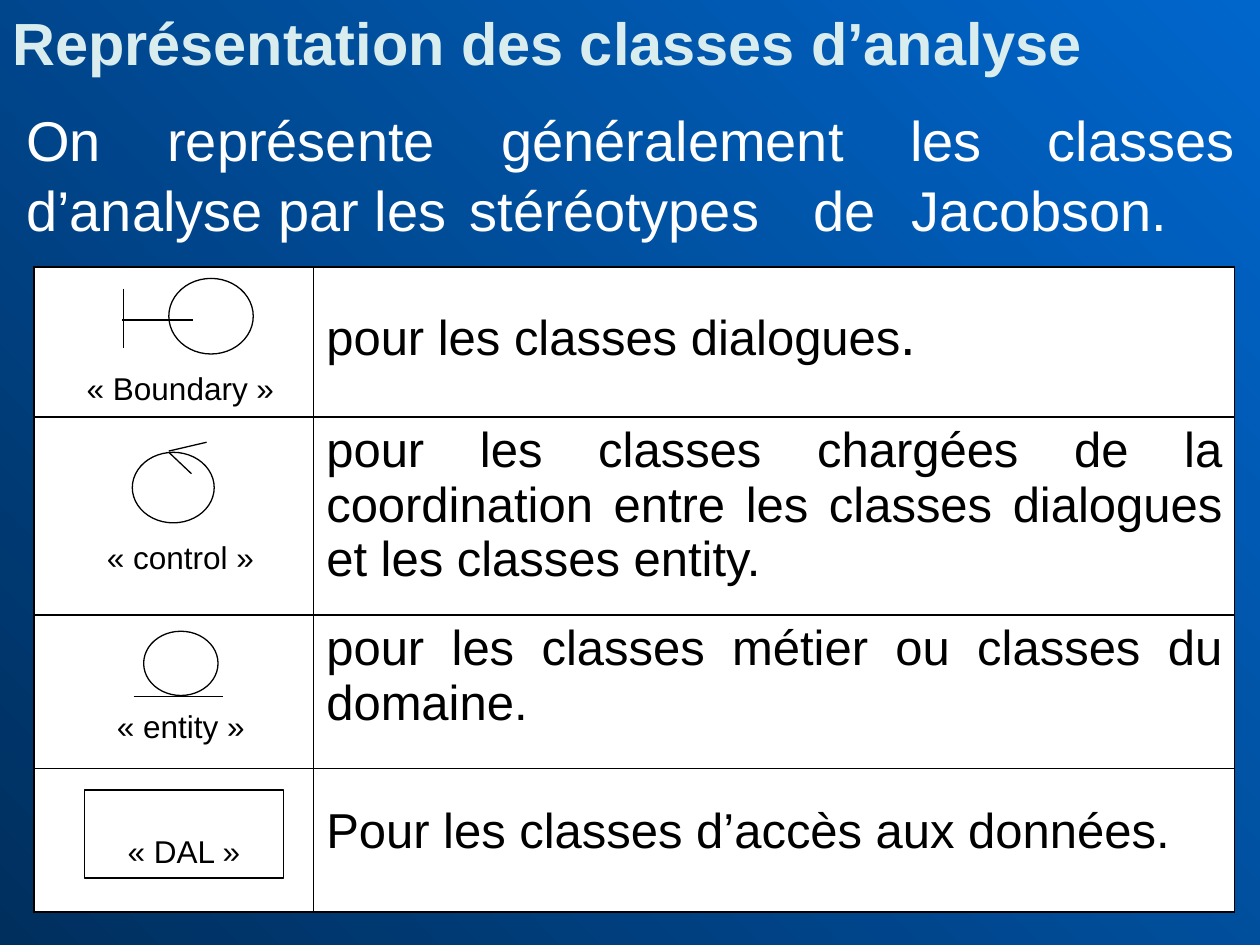
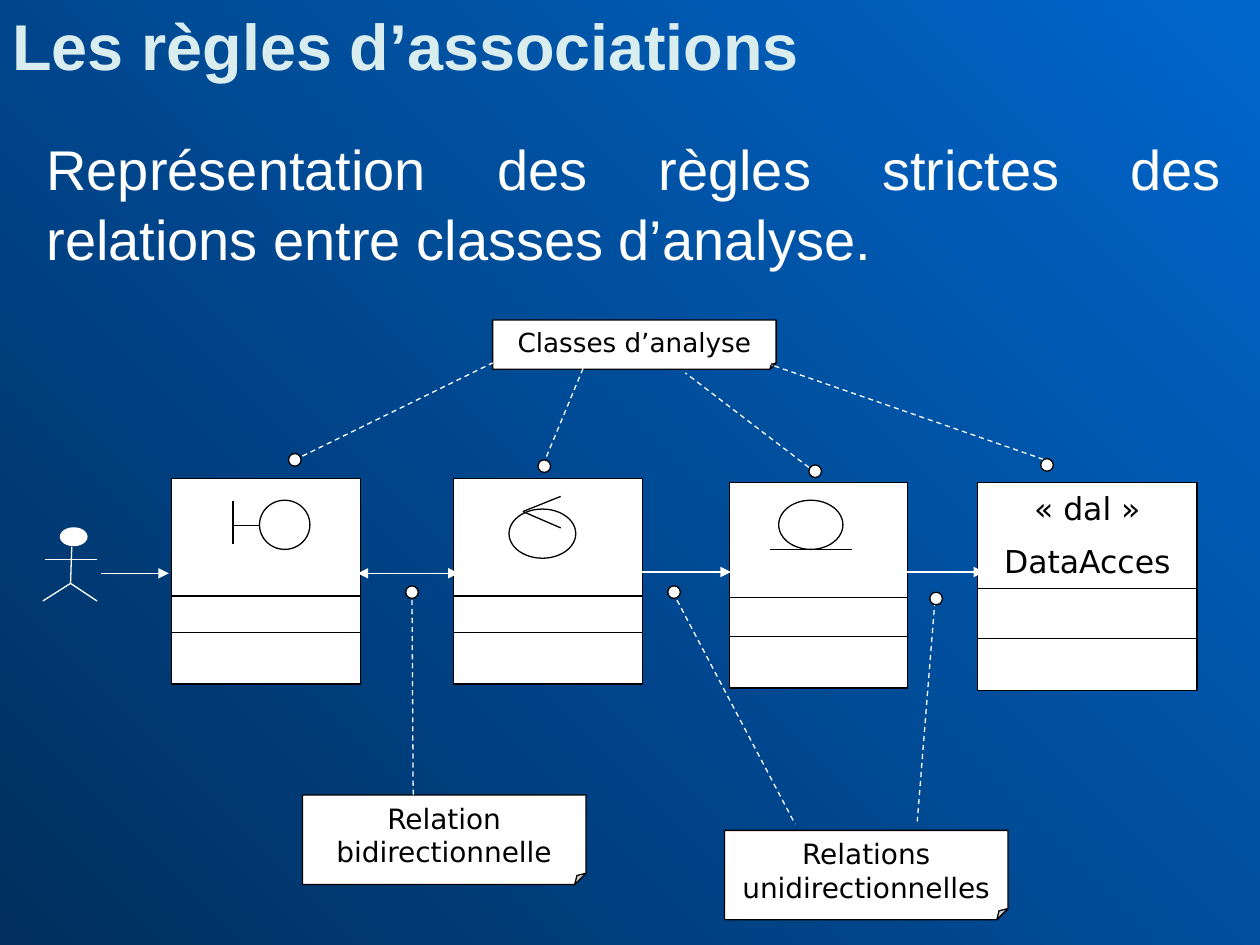
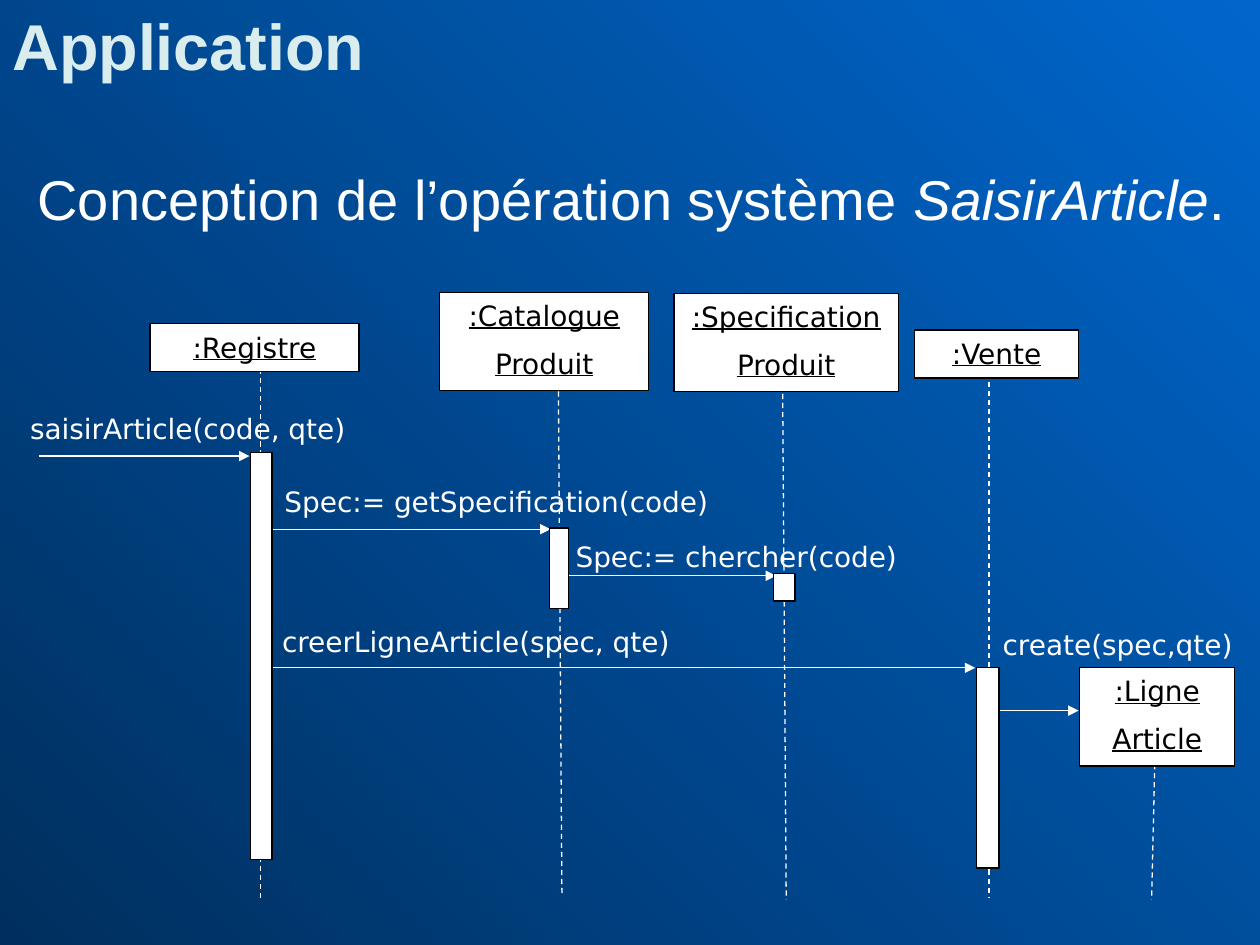
from lxml import etree
from pptx import Presentation
from pptx.dml.color import RGBColor
from pptx.enum.dml import MSO_LINE
from pptx.enum.shapes import MSO_CONNECTOR, MSO_SHAPE
from pptx.enum.text import MSO_ANCHOR, PP_ALIGN
from pptx.oxml.ns import qn
from pptx.util import Pt

PX = 9144
NAVY = RGBColor(0x00, 0x2F, 0x5E)
BLUE = RGBColor(0x00, 0x66, 0xCC)
MINT = RGBColor(0xD9, 0xED, 0xEF)
WHITE = RGBColor(0xFF, 0xFF, 0xFF)
BLACK = RGBColor(0x00, 0x00, 0x00)
RECT, OVAL, NOTE = MSO_SHAPE.RECTANGLE, MSO_SHAPE.OVAL, MSO_SHAPE.FOLDED_CORNER
STRAIGHT, DASH = MSO_CONNECTOR.STRAIGHT, MSO_LINE.DASH
LEFT, CENTER, JUSTIFY = PP_ALIGN.LEFT, PP_ALIGN.CENTER, PP_ALIGN.JUSTIFY
TOP = MSO_ANCHOR.TOP
SANS, MONO_LABEL = "Arial", "DejaVu Sans"


def font(size, name, color, **extra):
    return {"size": Pt(size), "name": name, "color": color, **extra}


BODY = font(32, SANS, WHITE)
CELL = font(28, SANS, BLACK)
STEREOTYPE = font(18, SANS, BLACK)
CLASS_NAME = font(18, MONO_LABEL, BLACK)
NOTE_SMALL = font(15, MONO_LABEL, BLACK)
NOTE_TEXT = font(16, MONO_LABEL, BLACK)
OBJECT = font(16, MONO_LABEL, BLACK, underline=True)
MESSAGE = font(16, MONO_LABEL, WHITE)

STEREOTYPE_INTRO = ("On représente généralement les classes d’analyse par les "
                    "\tstéréotypes \tde \tJacobson.")
INTRO_TABS = [352, 625, 703]
TABLE_PLACE = (27, 212, 953, 512)
TABLE_COLUMNS = [222, 731]
TABLE_ROWS = [
    (119, 30, JUSTIFY, [("pour les classes dialogues", {}), (".", {"size": Pt(32)})]),
    (157, 5, JUSTIFY, "pour les classes chargées de la coordination entre les "
                      "classes dialogues et les classes entity."),
    (122, 5, JUSTIFY, "pour les classes métier ou classes du domaine."),
    (114, 28, LEFT, "Pour les classes d’accès aux données."),
]
STEREOTYPE_CIRCLES = [(134, 221, 67, 60), (105, 359, 65, 56), (114, 501, 59, 51)]
STEREOTYPE_STROKES = [
    (97, 254, 153, 254), (98, 229, 98, 276),
    (134, 358, 164, 351), (134, 359, 152, 376),
    (106, 553, 177, 553),
]
STEREOTYPE_LABELS = [
    ((59, 288, 173, 40), "« Boundary »"),
    ((75, 422, 150, 40), "« control »"),
    ((83, 556, 134, 40), "« entity »"),
]
DAL_BOX = (67, 627, 158, 70)

ASSOCIATION_INTRO = ("Représentation des règles strictes des relations entre "
                     "classes d’analyse.")
COMPARTMENT_HEIGHT = 41
CLASS_CARDS = [
    (136, 380, 150, 131, (473, 502), []),
    (360, 380, 150, 131, (473, 502), []),
    (579, 383, 141, 131, (474, 505), []),
    (776, 383, 174, 86, (467, 507), ["« dal »", "DataAcces"]),
]
CLASS_CIRCLES = [(206, 397, 40, 39), (404, 404, 53, 39), (618, 397, 51, 39)]
CLASS_STROKES = [
    (184, 417, 206, 417), (185, 398, 185, 432),
    (415, 406, 445, 394), (415, 406, 445, 419),
    (611, 436, 676, 436),
]
ACTOR_HEAD = (48, 419, 21, 14)
ACTOR_STROKES = [
    (57, 434, 56, 463), (56, 463, 34, 477), (56, 463, 77, 477), (36, 444, 77, 444),
]
ONE_WAY = [(80, 455, 134, 455), (454, 454, 580, 454), (694, 454, 781, 454)]
TWO_WAY = (284, 455, 364, 455)
NOTE_LINKS = [
    (240, 362, 391, 288), (431, 369, 465, 287), (642, 371, 544, 296),
    (835, 367, 599, 285), (327, 469, 328, 644), (534, 470, 631, 654),
    (742, 477, 728, 652),
]
DOT = 10
DOTS = [(229, 360), (427, 365), (642, 369), (826, 364), (322, 465), (530, 465), (738, 470)]
NOTES = [
    ((391, 254, 225, 39), "Classes d’analyse", NOTE_SMALL),
    ((240, 631, 225, 71), "Relation bidirectionnelle", NOTE_TEXT),
    ((575, 659, 225, 71), "Relations unidirectionnelles", NOTE_TEXT),
]

OPERATION_INTRO = [("Conception de l’opération système ", {}),
                   ("SaisirArticle", {"italic": True}), (".", {})]
LIFELINES = [
    (207, 293, 207, 714), (443, 282, 446, 711), (621, 284, 624, 714),
    (785, 296, 785, 713), (918, 542, 914, 714),
]
CALLS = [
    (31, 362, 198, 362), (215, 420, 437, 420), (438, 457, 616, 457),
    (206, 530, 774, 530), (791, 564, 856, 564),
]
ACTIVATIONS = [
    (199, 359, 17, 323), (436, 419, 15, 64), (614, 455, 17, 22), (775, 530, 18, 159),
]
OBJECTS = [
    ((119, 257, 166, 38), [":Registre"]),
    ((349, 232, 166, 78), [":Catalogue", "Produit"]),
    ((535, 233, 178, 78), [":Specification", "Produit"]),
    ((726, 262, 130, 38), [":Vente"]),
    ((857, 530, 123, 78), [":Ligne", "Article"]),
]
MESSAGES = [
    ((14, 322, 293, 37), "saisirArticle(code, qte)"),
    ((216, 380, 370, 37), "Spec:= getSpecification(code)"),
    ((447, 423, 311, 37), "Spec:= chercher(code)"),
    ((214, 491, 350, 37), "creerLigneArticle(spec, qte)"),
    ((786, 493, 214, 37), "create(spec,qte)"),
]


def emu(lengths):
    return [length * PX for length in lengths]


def write(frame, paragraphs, style, align=LEFT, spacing=None):
    for index, content in enumerate(paragraphs):
        para = frame.add_paragraph() if index else frame.paragraphs[0]
        para.alignment = align
        if index:
            para.space_before = style["size"] // 2
        if spacing:
            para.line_spacing = spacing
        spans = [(content, {})] if isinstance(content, str) else content
        for text, changes in spans:
            span = para.add_run()
            span.text = text
            for key, value in {**style, **changes}.items():
                if key == "color":
                    span.font.color.rgb = value
                else:
                    setattr(span.font, key, value)


def add_text(page, place, paragraphs, style, align=LEFT, spacing=None):
    frame = page.shapes.add_textbox(*emu(place)).text_frame
    frame.word_wrap = True
    write(frame, paragraphs, style, align, spacing)
    return frame


def add_box(page, kind, place, paragraphs=(), style=None, line=BLACK, top=5):
    box = page.shapes.add_shape(kind, *emu(place))
    box.shadow.inherit = False
    box.fill.solid()
    box.fill.fore_color.rgb = WHITE
    box.line.color.rgb = line
    box.line.width = Pt(0.75)
    if kind == NOTE:
        guides = box._element.spPr.find(qn("a:prstGeom")).get_or_add_avLst()
        etree.SubElement(guides, qn("a:gd"), name="adj", fmla="val 12500")
    if paragraphs:
        frame = box.text_frame
        for key, value in {"word_wrap": True, "vertical_anchor": TOP,
                           "margin_top": top * PX}.items():
            setattr(frame, key, value)
        write(frame, paragraphs, style, CENTER)


def add_line(page, ends, color=WHITE, dash=None, arrows=()):
    line = page.shapes.add_connector(STRAIGHT, *emu(ends))
    line.line.color.rgb = color
    line.line.width = Pt(0.75)
    if dash:
        line.line.dash_style = dash
    properties = line._element.spPr
    for arrow in arrows:
        etree.SubElement(properties.find(qn("a:ln")), qn("a:" + arrow), type="triangle")
    etree.SubElement(properties, qn("a:effectLst"))


def add_page(deck, title, size, height):
    page = deck.slides.add_slide(deck.slide_layouts[6])
    add_text(page, (0, 0, 1000, height), [title], font(size, SANS, MINT, bold=True))
    return page


def add_intro(page, place, content):
    return add_text(page, place, [content], BODY, JUSTIFY, 1.05)


def set_tabs(para, stops):
    tabs = etree.SubElement(para._p.get_or_add_pPr(), qn("a:tabLst"))
    for stop in stops:
        etree.SubElement(tabs, qn("a:tab"), pos=str(stop * PX), algn="l")


def format_cell(cell):
    properties = cell._tc.get_or_add_tcPr()
    for side in ("lnL", "lnR", "lnT", "lnB"):
        border = etree.SubElement(properties, qn("a:" + side), w=str(int(Pt(1))))
        fill = etree.SubElement(border, qn("a:solidFill"))
        etree.SubElement(fill, qn("a:srgbClr"), val=str(BLACK))
    cell.fill.solid()
    cell.fill.fore_color.rgb = WHITE


def add_stereotype_table(page):
    table = page.shapes.add_table(len(TABLE_ROWS), len(TABLE_COLUMNS),
                                  *emu(TABLE_PLACE)).table
    table.first_row = table.horz_banding = False
    for column, width in zip(table.columns, TABLE_COLUMNS):
        column.width = width * PX
    for row, (height, top, align, content) in zip(table.rows, TABLE_ROWS):
        row.height = height * PX
        for cell in row.cells:
            format_cell(cell)
        description = row.cells[1]
        description.margin_top = top * PX
        write(description.text_frame, [content], CELL, align)


def add_symbols(page, circles, strokes):
    for place in circles:
        add_box(page, OVAL, place)
    for ends in strokes:
        add_line(page, ends, BLACK)


def build_stereotypes(deck):
    page = add_page(deck, "Représentation des classes d’analyse", 34, 67)
    intro = add_intro(page, (11, 76, 980, 130), STEREOTYPE_INTRO)
    set_tabs(intro.paragraphs[0], INTRO_TABS)
    add_stereotype_table(page)
    add_symbols(page, STEREOTYPE_CIRCLES, STEREOTYPE_STROKES)
    add_box(page, RECT, DAL_BOX, ["« DAL »"], STEREOTYPE, top=33)
    for place, label in STEREOTYPE_LABELS:
        add_text(page, place, [label], STEREOTYPE)


def build_associations(deck):
    page = add_page(deck, "Les règles d’associations", 37, 72)
    add_intro(page, (27, 99, 953, 130), ASSOCIATION_INTRO)
    add_box(page, OVAL, ACTOR_HEAD, line=WHITE)
    for ends in ACTOR_STROKES:
        add_line(page, ends)
    for left, top, width, height, compartments, names in CLASS_CARDS:
        add_box(page, RECT, (left, top, width, height), names, CLASS_NAME)
        for compartment in compartments:
            add_box(page, RECT, (left, compartment, width, COMPARTMENT_HEIGHT))
    add_symbols(page, CLASS_CIRCLES, CLASS_STROKES)
    for ends in ONE_WAY:
        add_line(page, ends, arrows=["tailEnd"])
    add_line(page, TWO_WAY, arrows=["headEnd", "tailEnd"])
    for place, text, style in NOTES:
        add_box(page, NOTE, place, [text], style)
    for ends in NOTE_LINKS:
        add_line(page, ends, dash=DASH)
    for left, top in DOTS:
        add_box(page, OVAL, (left, top, DOT, DOT))


def build_application(deck):
    page = add_page(deck, "Application", 37, 72)
    add_intro(page, (20, 123, 964, 70), OPERATION_INTRO)
    for ends in LIFELINES:
        add_line(page, ends, dash=DASH)
    for ends in CALLS:
        add_line(page, ends, arrows=["tailEnd"])
    for place in ACTIVATIONS:
        add_box(page, RECT, place)
    for place, names in OBJECTS:
        add_box(page, RECT, place, names, OBJECT)
    for place, text in MESSAGES:
        add_text(page, place, [text], MESSAGE)


def main():
    deck = Presentation()
    deck.slide_width, deck.slide_height = emu((1000, 750))
    backdrop = deck.slide_master.background.fill
    backdrop.gradient()
    backdrop.gradient_angle = 45
    for stop, color, position in zip(backdrop.gradient_stops, (NAVY, BLUE), (0, 1)):
        stop.color.rgb = color
        stop.position = position
    build_stereotypes(deck)
    build_associations(deck)
    build_application(deck)
    deck.save("out.pptx")


if __name__ == "__main__":
    main()
